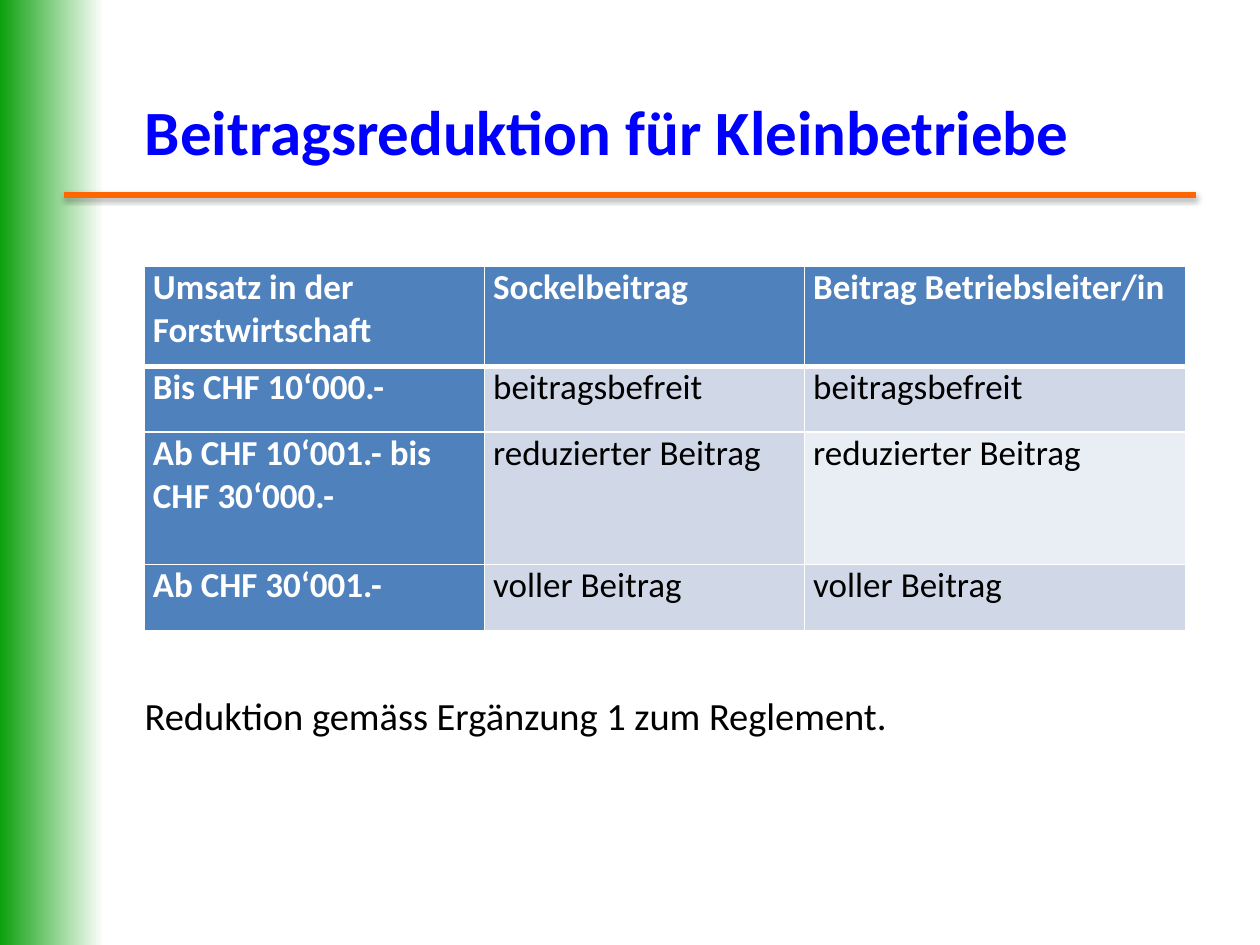
from pptx import Presentation
from pptx.dml.color import RGBColor
from pptx.enum import shapes, text
from pptx.oxml import parse_xml
from pptx.oxml.ns import nsdecls
from pptx.util import Pt

GREEN = RGBColor(0x00, 0x9B, 0x00)
ORANGE = RGBColor(0xFF, 0x66, 0x00)
BLUE = RGBColor(0x00, 0x00, 0xFF)
STEEL = RGBColor(0x4F, 0x81, 0xBD)
BAND = RGBColor(0xD0, 0xD8, 0xE8)
PALE = RGBColor(0xE9, 0xED, 0xF4)
WHITE = RGBColor(0xFF, 0xFF, 0xFF)
BLACK = RGBColor(0x00, 0x00, 0x00)

ROWS = [
    ("Umsatz in der Forstwirtschaft", "Sockelbeitrag", "Beitrag Betriebsleiter/in"),
    ("Bis CHF 10‘000.-", "beitragsbefreit", "beitragsbefreit"),
    ("Ab CHF 10‘001.- bis CHF 30‘000.-", "reduzierter Beitrag", "reduzierter Beitrag"),
    ("Ab CHF 30‘001.-", "voller Beitrag", "voller Beitrag"),
]
WIDTHS = (194.4, 182.9, 218.1)
HEIGHTS = (57.3, 37.7, 75.6, 37.7)


def write(frame, words, size=20, color=BLACK, bold=False, gap=0):
    frame.word_wrap = True
    para = frame.paragraphs[0]
    para.alignment = text.PP_ALIGN.LEFT
    para.space_before = para.space_after = Pt(gap)
    run = para.add_run()
    run.text = words
    font = run.font
    font.name, font.size, font.bold = "Calibri", Pt(size), bold
    font.color.rgb = color


def place(shape, box):
    shape.left, shape.top, shape.width, shape.height = map(Pt, box)


def draw_bar(slide, box):
    bar = slide.shapes.add_shape(shapes.MSO_SHAPE.RECTANGLE, *map(Pt, box))
    bar.shadow.inherit = False
    bar.line.fill.background()
    bar.fill.gradient()
    bar.fill.gradient_angle = 0
    for stop, color in zip(bar.fill.gradient_stops, (GREEN, WHITE)):
        stop.color.rgb = color


def draw_rule(slide, left, right, y):
    rule = slide.shapes.add_connector(
        shapes.MSO_CONNECTOR.STRAIGHT, Pt(left), Pt(y), Pt(right), Pt(y))
    rule.line.color.rgb = ORANGE
    rule.line.width = Pt(3)
    # Soft shadow below the rule
    rule._element.spPr.append(parse_xml(
        f'<a:effectLst {nsdecls("a")}>'
        f'<a:outerShdw blurRad="{Pt(3.1)}" dist="{Pt(1.6)}" dir="5400000" rotWithShape="0">'
        '<a:srgbClr val="000000"><a:alpha val="38000"/></a:srgbClr>'
        '</a:outerShdw></a:effectLst>'))


def set_title(slide, box):
    title = slide.shapes.title
    place(title, box)
    frame = title.text_frame
    frame.auto_size = text.MSO_AUTO_SIZE.NONE
    frame.vertical_anchor = text.MSO_ANCHOR.MIDDLE
    write(frame, "Beitragsreduktion für Kleinbetriebe", size=36, color=BLUE, bold=True)


def edge(cell, side, width):
    cell._tc.get_or_add_tcPr().append(parse_xml(
        f'<a:ln{side} {nsdecls("a")} w="{Pt(width)}"><a:solidFill>'
        f'<a:srgbClr val="{WHITE}"/></a:solidFill></a:ln{side}>'))


def draw_table(slide, left, top):
    grid = slide.shapes.add_table(
        len(ROWS), len(WIDTHS), Pt(left), Pt(top),
        Pt(sum(WIDTHS)), Pt(sum(HEIGHTS))).table
    for col, width in zip(grid.columns, WIDTHS):
        col.width = Pt(width)
    for row, height in zip(grid.rows, HEIGHTS):
        row.height = Pt(height)
    for r, row in enumerate(ROWS):
        for c, words in enumerate(row):
            cell = grid.cell(r, c)
            head = r == 0 or c == 0
            cell.margin_left = cell.margin_right = Pt(5)
            cell.margin_top = cell.margin_bottom = 0
            # The line under the header row is heavier
            for side in "LRTB":
                heavy = (r, side) in ((0, "B"), (1, "T"))
                edge(cell, side, 3 if heavy else 1)
            cell.fill.solid()
            cell.fill.fore_color.rgb = (
                STEEL if head else PALE if (r, c) == (2, 2) else BAND)
            write(cell.text_frame, words, color=WHITE if head else BLACK,
                  bold=head, gap=4)


def add_note(slide, box):
    note = slide.shapes.add_textbox(*map(Pt, box))
    write(note.text_frame, "Reduktion gemäss Ergänzung 1 zum Reglement.", size=22)
    note.text_frame.auto_size = text.MSO_AUTO_SIZE.SHAPE_TO_FIT_TEXT


def main():
    deck = Presentation()
    deck.slide_width, deck.slide_height = Pt(720), Pt(540)
    slide = deck.slides.add_slide(deck.slide_layouts[5])
    draw_bar(slide, (-3, 0, 62.6, 542))
    draw_rule(slide, 36.7, 683.3, 111.4)
    set_title(slide, (75.6, 43.2, 618.5, 62.6))
    draw_table(slide, 82.4, 152)
    add_note(slide, (75.6, 391.7, 522.7, 33.8))
    deck.save("out.pptx")


if __name__ == "__main__":
    main()
